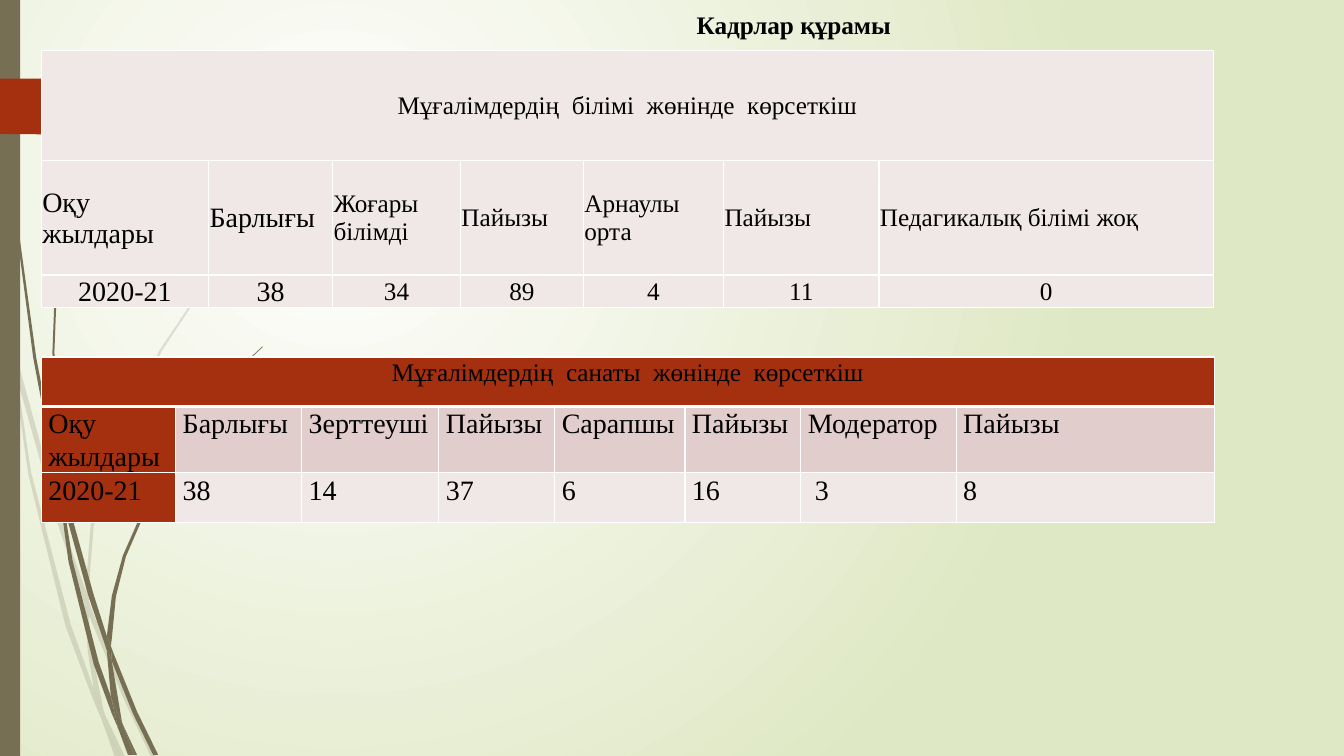
from dataclasses import dataclass

from lxml.etree import SubElement
from pptx import Presentation
from pptx.dml.color import RGBColor as RGB
from pptx.enum.shapes import MSO_SHAPE as SHAPE
from pptx.enum.text import MSO_ANCHOR as ANCHOR, PP_ALIGN as ALIGN
from pptx.oxml.ns import qn
from pptx.util import Pt


@dataclass(frozen=True)
class Theme:
    font: str = "Times New Roman"
    text: str = "000000"
    light: str = "FFFFFF"
    meadow: str = "DFE8C4"
    stem: str = "766F54"
    accent: str = "A53010"
    pale: str = "F0E8E7"
    rose: str = "E1CDCC"
    small: int = 18
    large: int = 20


@dataclass(frozen=True)
class TableLook:
    margins: tuple
    anchor: ANCHOR
    line_spacing: float
    heading_fill: str
    heading_rule: int


# Outlines are corner points in hundredths of an inch.
GRID = Pt(0.72)

FAINT_STEMS = [
    [(11, 350), (9, 322), (0, 282), (0, 299), (10, 344)],
    [(58, 522), (84, 599), (85, 586), (62, 520), (14, 345), (17, 376)],
    [(92, 607), (88, 596), (88, 610), (123, 694), (150, 751), (155, 751), (127, 692)],
    [(119, 751), (124, 751), (105, 711)],
    [(93, 683), (70, 619), (31, 469), (17, 376), (11, 350), (28, 470), (65, 621),
     (92, 693), (101, 714), (99, 707)],
    [(84, 599), (87, 646), (93, 683), (96, 692), (105, 711), (103, 706), (91, 646),
     (88, 610), (88, 608)],
    [(88, 584), (93, 522), (110, 462), (160, 349), (229, 245), (268, 198), (290, 175),
     (312, 154), (312, 153), (289, 175), (268, 197), (228, 244), (158, 348), (107, 461),
     (90, 521), (85, 584), (85, 586), (88, 596)],
    [(101, 714), (114, 751), (119, 751)],
    [(88, 608), (88, 610), (88, 596), (85, 586), (84, 599)],
    [(96, 692), (93, 683), (99, 707), (101, 714), (119, 751), (105, 711)],
]
DARK_STEMS = [
    [(7, 110), (17, 233), (33, 355), (56, 477), (57, 481), (55, 457), (55, 453),
     (36, 355), (19, 232), (8, 109), (5, 48), (4, 0), (3, 0), (4, 48)],
    [(88, 592), (106, 645), (106, 633), (106, 631), (93, 590), (60, 472), (64, 505)],
    [(113, 649), (110, 641), (111, 656), (132, 708), (152, 749), (157, 749), (136, 706)],
    [(110, 691), (98, 657), (72, 556), (64, 505), (57, 477), (68, 557), (93, 659),
     (111, 708), (117, 722), (116, 717)],
    [(60, 472), (58, 453), (54, 349), (58, 245), (63, 193), (70, 141), (62, 193),
     (56, 245), (52, 349), (55, 449)],
    [(133, 749), (136, 749), (122, 719)],
    [(57, 477), (64, 505), (60, 472), (55, 449), (55, 453)],
    [(111, 633), (115, 592), (125, 552), (158, 476), (205, 406), (231, 374), (245, 359),
     (261, 344), (260, 344), (245, 358), (231, 373), (204, 405), (156, 474), (122, 551),
     (111, 591), (106, 631), (110, 641)],
    [(117, 722), (127, 749), (131, 749)],
    [(106, 645), (110, 691), (116, 706), (122, 719), (121, 716), (111, 656), (109, 651)],
    [(106, 645), (109, 651), (111, 656), (110, 641), (106, 631), (106, 633)],
    [(116, 706), (110, 691), (116, 717), (117, 722), (130, 749), (133, 749), (122, 719)],
]
PAGE_MARK = [(173, 108), (148, 133), (146, 134), (136, 134), (0, 133), (0, 78),
             (146, 78), (148, 79), (173, 104), (174, 106)]


class SlideBuilder:
    def __init__(self, slide, theme):
        self.slide = slide
        self.theme = theme

    def background(self):
        """Radial gradient centred in the upper left quarter."""
        fill = self.slide.background.fill
        fill.gradient()
        for stop, color in zip(fill.gradient_stops, (self.theme.light, self.theme.meadow)):
            stop.color.rgb = RGB.from_string(color)
        linear = next(self.slide.element.iter(qn("a:lin")))
        gradient = linear.getparent()
        gradient.remove(linear)
        radial = SubElement(gradient, qn("a:path"), path="circle")
        SubElement(radial, qn("a:fillToRect"), l="50000", t="50000", r="100000", b="100000")

    def paint(self, shape, color, opacity=100):
        shape.shadow.inherit = False
        shape.fill.solid()
        shape.fill.fore_color.rgb = RGB.from_string(color)
        shape.line.fill.background()
        if opacity < 100:
            rgb = next(shape.element.spPr.iter(qn("a:srgbClr")))
            SubElement(rgb, qn("a:alpha"), val=str(opacity * 1000))

    def outline(self, points, color, opacity=100):
        builder = self.slide.shapes.build_freeform(*points[0], scale=GRID)
        builder.add_line_segments(points[1:], close=True)
        self.paint(builder.convert_to_shape(), color, opacity)

    def bar(self, left, top, width, height, color):
        box = [Pt(v) for v in (left, top, width, height)]
        self.paint(self.slide.shapes.add_shape(SHAPE.RECTANGLE, *box), color)

    def add_text(self, paragraph, text, size, align, bold=False):
        paragraph.alignment = align
        run = paragraph.add_run()
        run.text = text
        run.font.name = self.theme.font
        run.font.size = Pt(size)
        run.font.bold = bold
        run.font.color.rgb = RGB.from_string(self.theme.text)

    def title(self, text, left, top, width, height):
        title = self.slide.shapes.title
        title.left, title.top, title.width, title.height = map(Pt, (left, top, width, height))
        frame = title.text_frame
        frame.word_wrap = True
        frame.vertical_anchor = ANCHOR.TOP
        self.add_text(frame.paragraphs[0], text, self.theme.small, ALIGN.CENTER, True)

    def cell(self, cell, text, size, align, fill, look, bottom_rule=1):
        cell.margin_left, cell.margin_top, cell.margin_right, cell.margin_bottom = map(Pt, look.margins)
        cell.vertical_anchor = look.anchor
        cell.fill.solid()
        cell.fill.fore_color.rgb = RGB.from_string(fill)
        props = cell._tc.get_or_add_tcPr()
        for place, side in enumerate("LRTB"):
            width = bottom_rule if side == "B" else 1
            line = SubElement(props, qn(f"a:ln{side}"), w=str(Pt(width)))
            SubElement(SubElement(line, qn("a:solidFill")), qn("a:srgbClr"), val=self.theme.light)
            props.insert(place, line)
        frame = cell.text_frame
        for number, part in enumerate(text.split("\n") if text else []):
            paragraph = frame.add_paragraph() if number else frame.paragraphs[0]
            paragraph.line_spacing = look.line_spacing
            self.add_text(paragraph, part, size, align)

    def table(self, left, top, columns, rows, heading, body, look, style):
        """Table under one merged heading; style(row, column) gives size, alignment, fill."""
        frame = self.slide.shapes.add_table(len(rows), len(columns), Pt(left), Pt(top),
                                            Pt(sum(columns)), Pt(sum(rows)))
        table = frame.table
        table.first_row = table.horz_banding = False
        for column, width in zip(table.columns, columns):
            column.width = Pt(width)
        for row, height in zip(table.rows, rows):
            row.height = Pt(height)
        table.cell(0, 0).merge(table.cell(0, len(columns) - 1))
        for c in range(len(columns)):
            self.cell(table.cell(0, c), "" if c else heading, self.theme.small, ALIGN.CENTER,
                      look.heading_fill, look, look.heading_rule)
        for r, texts in enumerate(body, 1):
            for c, text in enumerate(texts):
                self.cell(table.cell(r, c), text, *style(r, c), look)
        return table


def main():
    deck = Presentation()
    deck.slide_width, deck.slide_height = Pt(960), Pt(540)
    theme = Theme()
    page = SlideBuilder(deck.slides.add_slide(deck.slide_layouts[5]), theme)
    page.background()
    for stem in FAINT_STEMS:
        page.outline(stem, theme.stem, 20)
    for stem in DARK_STEMS:
        page.outline(stem, theme.stem)
    page.bar(0, 0, 14.4, 540, theme.stem)
    page.outline(PAGE_MARK, theme.accent)
    page.title("Кадрлар құрамы", 190, 3, 754, 51)

    def education_style(row, column):
        return (theme.large if column < 2 else theme.small,
                ALIGN.LEFT if row == 1 else ALIGN.CENTER, theme.pale)

    def category_style(row, column):
        fill = theme.accent if column == 0 else theme.rose if row == 1 else theme.pale
        return theme.large, ALIGN.LEFT, fill

    page.table(
        29.5, 36, [119.5, 88.6, 91.4, 87.8, 100.1, 111, 239], [78.5, 82, 21.6],
        "Мұғалімдердің  білімі  жөнінде  көрсеткіш",
        [["Оқу жылдары", "Барлығы", "Жоғары білімді", "Пайызы", "Арнаулы\nорта", "Пайызы",
          "Педагикалық білімі жоқ"],
         ["2020-21", "38", "34", "89", "4", "11", "0"]],
        TableLook((0.7, 0.7, 0.7, 0), ANCHOR.MIDDLE, 1, theme.pale, 1), education_style)
    categories = page.table(
        29.5, 255, [96, 90, 98, 82.8, 93, 82.8, 111, 184.3], [35.3, 42.5, 35.3],
        "Мұғалімдердің  санаты  жөнінде  көрсеткіш",
        [["Оқу жылдары", "Барлығы", "Зерттеуші", "Пайызы", "Сарапшы", "Пайызы", "Модератор",
          "Пайызы"],
         ["2020-21", "38", "14", "37", "6", "16", "3", "8"]],
        TableLook((5, 0, 5, 0), ANCHOR.TOP, 1.07, theme.accent, 3), category_style)
    categories.cell(2, 6).margin_left = Pt(10)
    deck.save("out.pptx")


if __name__ == "__main__":
    main()
